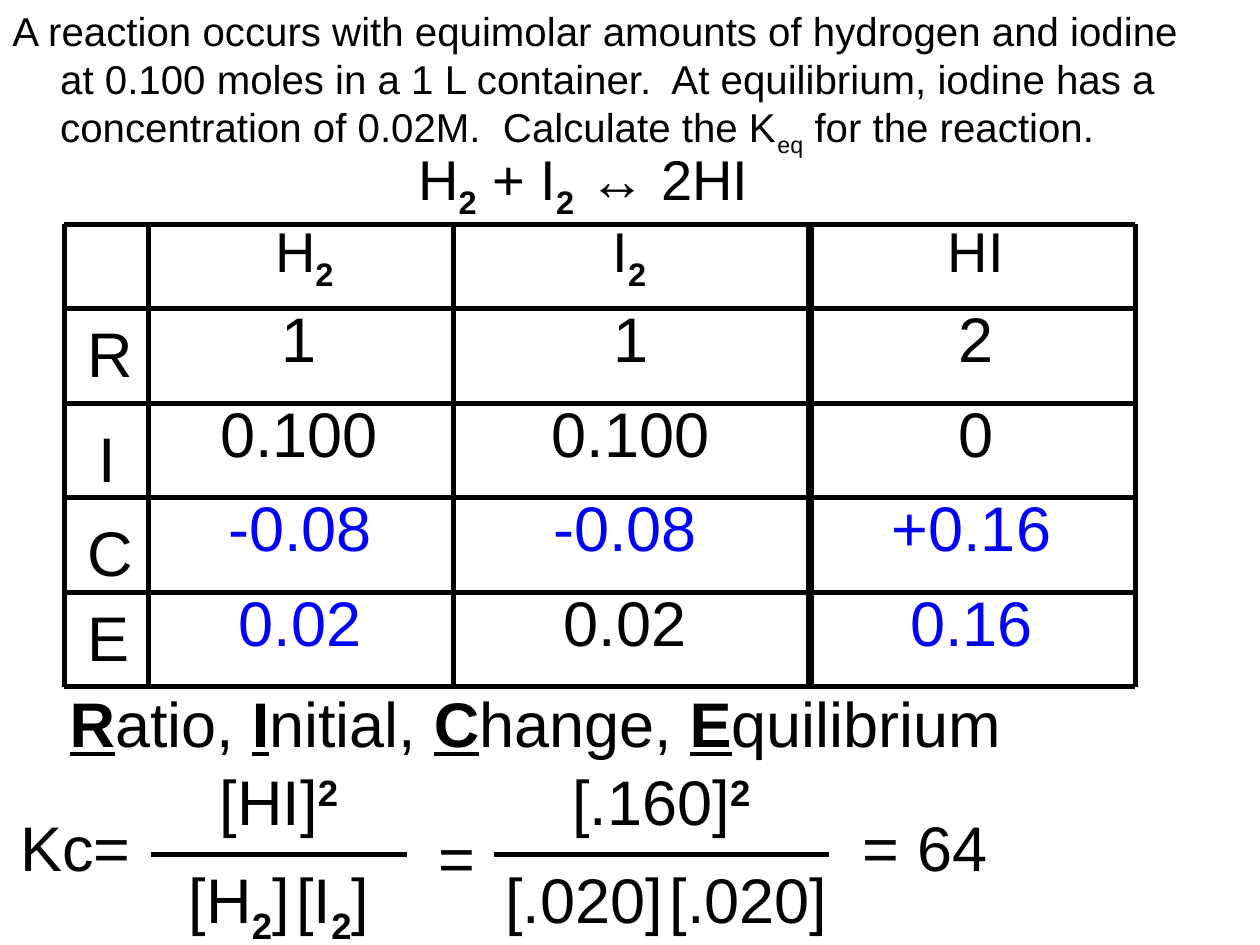
from dataclasses import dataclass
from itertools import accumulate

from lxml import etree
from pptx import Presentation
from pptx import util as u
from pptx.dml.color import RGBColor
from pptx.enum import shapes, text
from pptx.oxml.ns import qn


@dataclass(frozen=True)
class Theme:
    font: str = "Arial"
    ink: str = "000000"
    answer: str = "0000FF"
    problem: int = 23
    formula: int = 32
    value: int = 36
    gap: int = 14
    rule: float = 3
    heavy_rule: float = 4.5
    fraction_bar: float = 2.75


THEME = Theme()
CENTER, LEFT = text.PP_ALIGN.CENTER, text.PP_ALIGN.LEFT

# Run styles: bold, underline, baseline shift in thousandths of a percent
STYLES = {
    "plain": (False, False, 0),
    "gap": (False, False, 0),
    "sub": (True, False, -25000),
    "light sub": (False, False, -25000),
    "power": (True, False, 30000),
    "initial": (True, True, 0),
}
H2 = ["H", ("2", "sub")]
I2 = ["I", ("2", "sub")]
GAP = (" ", "gap")

# Grid rules, from the first edge and the column and row sizes
COLUMN_EDGES = list(accumulate([0.67, 2.42, 2.83, 2.58], initial=0.51))
ROW_EDGES = list(accumulate([0.67] + 4 * [0.75], initial=1.78))
HEAVY_EDGE = 3  # the rule between reactants and product

# Left and width of the entries under H2, I2 and HI
HEADING_SPANS = [(1.75, 1.33), (4.33, 1.33), (7.08, 1.33)]
GIVEN_SPANS = [(1.25, 2.25), (3.67, 2.67), (7.08, 1.33)]
CHANGE_SPANS = [(1.42, 1.92), (4, 1.92), (6.75, 1.92)]

# Row label, its drop below the row's upper rule, entry spans, entries
RICE_ROWS = [
    ("R", 0, GIVEN_SPANS, ["1", "1", "2"]),
    ("I", 0.08, GIVEN_SPANS, ["0.100", "0.100", "0"]),
    ("C", 0.08, CHANGE_SPANS, ["-0.08", "-0.08", "+0.16"]),
    ("E", 0, CHANGE_SPANS, ["0.02", "0.02", "0.16"]),
]
ANSWERS = {("C", 0), ("C", 1), ("C", 2), ("E", 0), ("E", 2)}
ENTRY_RISE = 0.12

BAR_Y = 6.78
LINE_HEIGHT = 0.7


def write(frame, content, size=THEME.value, color=THEME.ink, align=CENTER):
    """Fill a frame with a string or a list of strings and (string, style) pairs."""
    frame.word_wrap = True
    paragraph = frame.paragraphs[0]
    paragraph.alignment = align
    for part in [content] if isinstance(content, str) else content:
        words, style = (part, "plain") if isinstance(part, str) else part
        bold, underline, baseline = STYLES[style]
        run = paragraph.add_run()
        run.text = words
        font = run.font
        font.name, font.bold = THEME.font, bold
        font.size = u.Pt(THEME.gap if style == "gap" else size)
        font.color.rgb = RGBColor.from_string(color)
        if underline:
            font.underline = True
        if baseline:
            font._element.set("baseline", str(baseline))
    return paragraph


def add_text(slide, content, left, top, width, height=LINE_HEIGHT, **style):
    box = slide.shapes.add_textbox(*map(u.Inches, (left, top, width, height)))
    return write(box.text_frame, content, **style)


def add_rule(slide, x1, y1, x2, y2, weight=THEME.rule):
    rule = slide.shapes.add_connector(
        shapes.MSO_CONNECTOR.STRAIGHT, *map(u.Inches, (x1, y1, x2, y2)))
    rule.line.width = u.Pt(weight)
    rule.line.color.rgb = RGBColor.from_string(THEME.ink)
    etree.SubElement(rule._element.spPr, qn("a:effectLst"))


def add_problem(slide):
    statement = [
        "A reaction occurs with equimolar amounts of hydrogen and iodine "
        "at 0.100 moles in a 1 L container.  At equilibrium, iodine has a "
        "concentration of 0.02M.  Calculate the K",
        ("eq", "light sub"),
        " for the reaction.",
    ]
    paragraph = add_text(slide, statement, 0, 0, 9.67, 1.08,
                         size=THEME.problem, align=LEFT)
    hanging = u.Inches(0.38)
    properties = paragraph._p.get_or_add_pPr()
    properties.set("marL", str(hanging))
    properties.set("indent", str(-hanging))


def add_equation(slide):
    title = slide.shapes.title
    title.left, title.top, title.width, title.height = map(
        u.Inches, (-0.08, 1.23, 9.42, 0.44))
    frame = title.text_frame
    frame.auto_size = text.MSO_AUTO_SIZE.NONE
    frame.vertical_anchor = text.MSO_ANCHOR.MIDDLE
    write(frame, [*H2, " + ", *I2, " ↔ 2HI"], size=THEME.formula)


def add_rice_grid(slide):
    for y in ROW_EDGES:
        add_rule(slide, COLUMN_EDGES[0], y, COLUMN_EDGES[-1], y)
    for edge, x in enumerate(COLUMN_EDGES):
        weight = THEME.heavy_rule if edge == HEAVY_EDGE else THEME.rule
        add_rule(slide, x, ROW_EDGES[0], x, ROW_EDGES[-1], weight)


def add_rice_entries(slide):
    for (left, width), species in zip(HEADING_SPANS, [H2, I2, "HI"]):
        add_text(slide, species, left, 1.67, width, 0.63, size=THEME.formula)
    for top, (label, drop, spans, entries) in zip(ROW_EDGES[1:], RICE_ROWS):
        add_text(slide, label, 0.6, top + drop, 0.5)
        for species, ((left, width), entry) in enumerate(zip(spans, entries)):
            answered = (label, species) in ANSWERS
            add_text(slide, entry, left, top - ENTRY_RISE, width,
                     color=THEME.answer if answered else THEME.ink)


def add_fraction(slide, numerator, denominator, bar_span, denominator_span):
    left, width = bar_span
    add_text(slide, numerator, left, BAR_Y - 0.78, width)
    add_rule(slide, left, BAR_Y, left + width, BAR_Y, THEME.fraction_bar)
    left, width = denominator_span
    add_text(slide, denominator, left, BAR_Y, width)


def add_constant(slide):
    add_text(slide, "Kc=", 0, 6.37, 1.2)
    add_fraction(slide, ["[HI]", ("2", "power")],
                 ["[", *H2, "]", GAP, "[", *I2, "]"],
                 (1.2, 2.03), (1.35, 1.73))
    add_text(slide, "=", 3.38, 6.45, 0.45)
    add_fraction(slide, ["[.160]", ("2", "power")],
                 ["[.020]", GAP, "[.020]"],
                 (3.92, 2.66), (3.83, 2.92))
    add_text(slide, "= 64", 6.75, 6.37, 1.33, align=LEFT)


def main():
    deck = Presentation()
    deck.slide_width, deck.slide_height = u.Inches(10), u.Inches(7.5)
    slide = deck.slides.add_slide(deck.slide_layouts[5])
    add_equation(slide)
    add_rice_grid(slide)
    add_rice_entries(slide)
    legend = [("R", "initial"), "atio, ", ("I", "initial"), "nitial, ",
              ("C", "initial"), "hange, ", ("E", "initial"), "quilibrium"]
    add_text(slide, legend, 0, 5.38, 8.5)
    add_constant(slide)
    add_problem(slide)
    deck.save("out.pptx")


if __name__ == "__main__":
    main()
